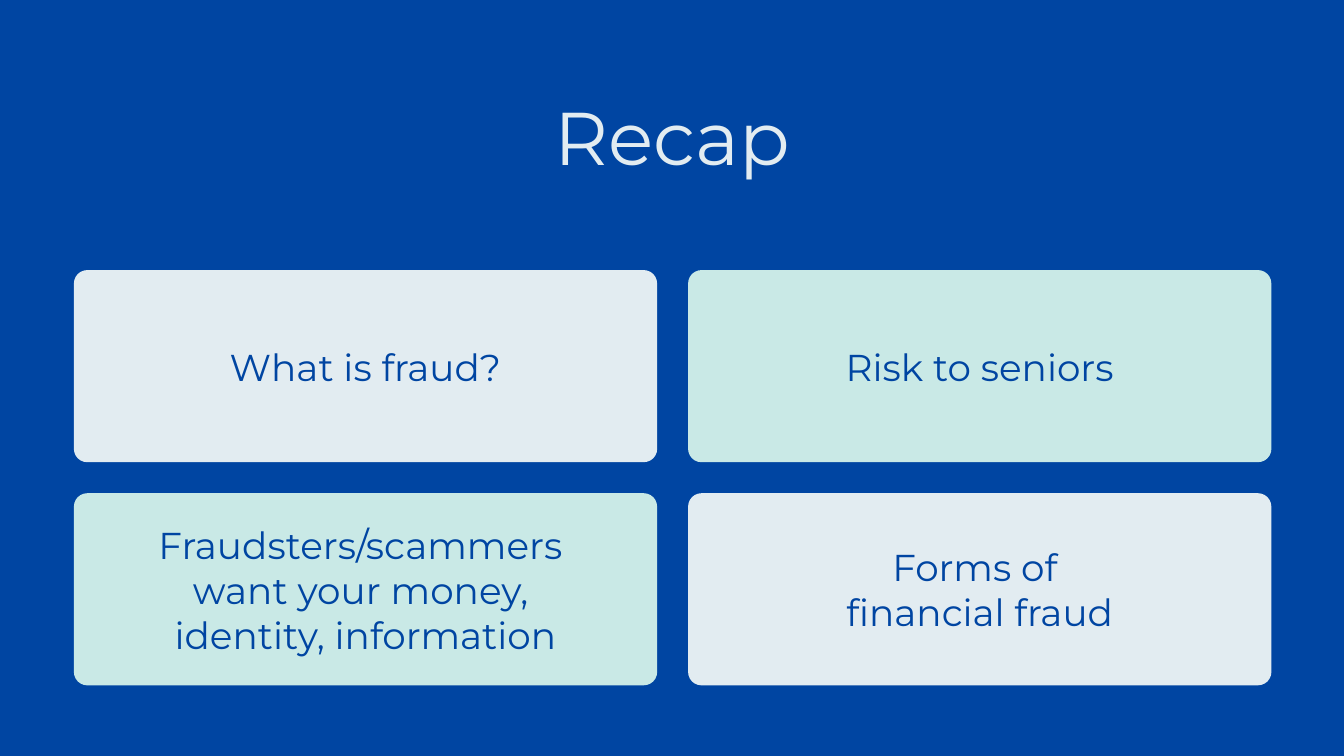
from pptx import Presentation
from pptx.dml.color import RGBColor
from pptx.enum.shapes import MSO_SHAPE as Shape
from pptx.enum.text import MSO_ANCHOR as Anchor, PP_ALIGN as Align
from pptx.util import Inches, Pt

COLORS = {"blue": "0045A2", "pale": "E2ECF1", "mint": "C9E9E6"}
FONT = "Montserrat"
TOPICS = [
    ["What is fraud?", "Risk to seniors"],
    ["Fraudsters/scammers \nwant your money, \nidentity, information",
     "Forms of \nfinancial fraud"],
]


def rgb(name):
    return RGBColor.from_string(COLORS[name])


def write_centered(frame, text, size, color, anchor):
    frame.word_wrap = True
    frame.vertical_anchor = anchor
    frame.margin_left = frame.margin_right = Inches(0.1)
    frame.margin_top = frame.margin_bottom = Inches(0.1)
    paragraph = frame.paragraphs[0]
    paragraph.text = text
    paragraph.alignment = Align.CENTER
    paragraph.font.name = FONT
    paragraph.font.size = Pt(size)
    paragraph.font.color.rgb = rgb(color)
    return paragraph


def add_title(slide, text, left, top, width, height):
    title = slide.shapes.add_textbox(
        Inches(left), Inches(top), Inches(width), Inches(height))
    heading = write_centered(title.text_frame, text, 40, "pale", Anchor.TOP)
    heading.line_spacing = 0.85


def add_card(slide, text, fill, left, top, width, height):
    card = slide.shapes.add_shape(
        Shape.ROUNDED_RECTANGLE,
        Inches(left), Inches(top), Inches(width), Inches(height))
    card.adjustments[0] = 0.07
    card.shadow.inherit = False
    card.fill.solid()
    card.fill.fore_color.rgb = rgb(fill)
    card.line.fill.background()
    write_centered(card.text_frame, text, 20, "blue", Anchor.MIDDLE)


def add_topic_grid(slide, topics, left, top, width, height, gap):
    """Fill the box with equal cards, alternating their colours."""
    columns, rows = len(topics[0]), len(topics)
    card_width = (width - gap * (columns - 1)) / columns
    card_height = (height - gap * (rows - 1)) / rows
    for row, texts in enumerate(topics):
        for column, text in enumerate(texts):
            add_card(slide, text, ("pale", "mint")[(row + column) % 2],
                     left + column * (card_width + gap),
                     top + row * (card_height + gap),
                     card_width, card_height)


def main():
    deck = Presentation()
    deck.slide_width = Inches(10)
    deck.slide_height = deck.slide_width * 9 // 16
    slide = deck.slides.add_slide(deck.slide_layouts[6])
    slide.background.fill.solid()
    slide.background.fill.fore_color.rgb = rgb("blue")
    add_title(slide, "Recap", 1.82, 0.68, 6.36, 0.7)
    add_topic_grid(slide, TOPICS, 0.55, 2.01, 8.91, 3.09, gap=0.23)
    deck.save("out.pptx")


if __name__ == "__main__":
    main()
